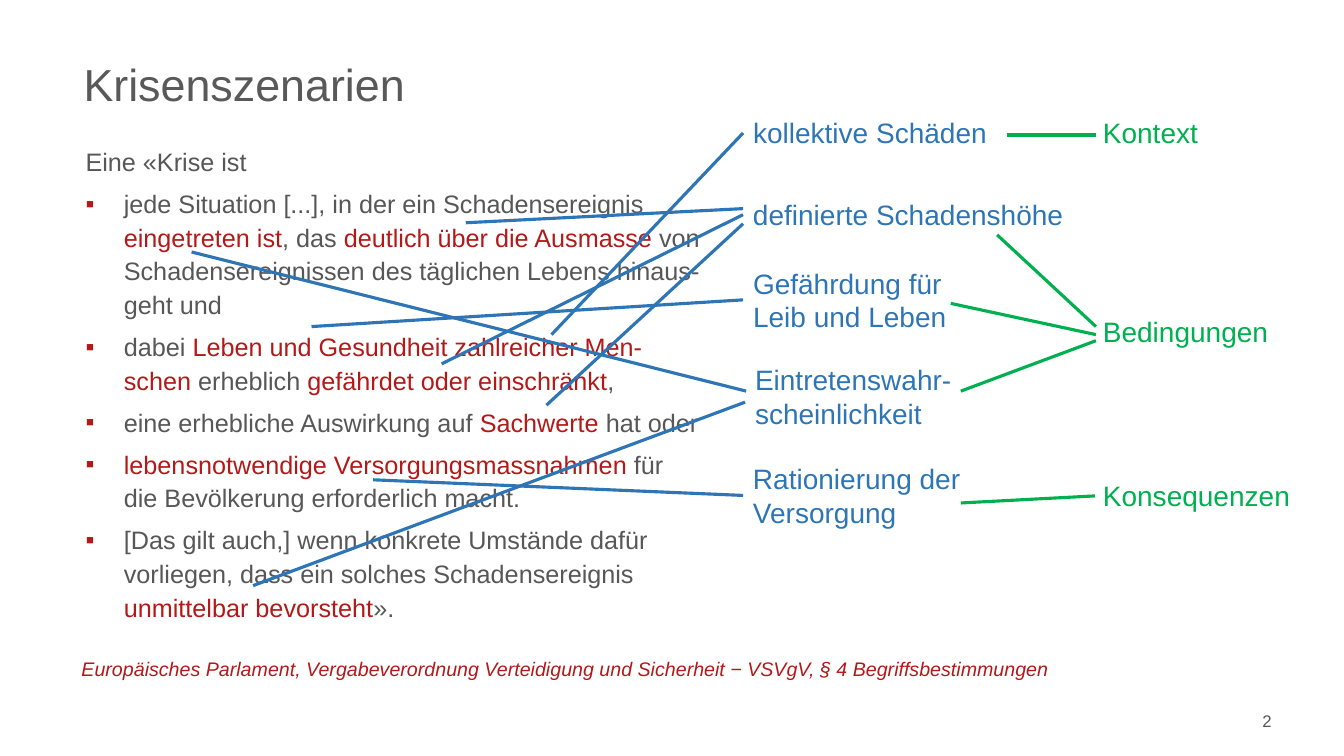
from lxml.etree import SubElement
from pptx import Presentation
from pptx.dml.color import RGBColor
from pptx.enum.shapes import MSO_CONNECTOR
from pptx.enum.text import MSO_ANCHOR, PP_ALIGN
from pptx.oxml.ns import qn
from pptx.util import Inches, Pt

GREY, TITLE_GREY, RED, BLUE, GREEN = "575757", "595959", "B41919", "2E75B6", "00B050"
LEFT_SIDE = 1
CRITERIA_LEFT, CATEGORIES_LEFT = 7.37, 10.84

DEFINITION = [
    [("Eine «Krise ist", GREY)],
    [("jede Situation [...], in der ein Schadensereignis ", GREY), ("eingetreten ist", RED),
     (", das ", GREY), ("deutlich über die Ausmasse ", RED),
     ("von Schadensereignissen des täglichen Lebens hinaus-geht und", GREY)],
    [("dabei ", GREY), ("Leben und Gesundheit zahlreicher Men-schen ", RED),
     ("erheblich ", GREY), ("gefährdet oder einschränkt", RED), (",", GREY)],
    [("eine erhebliche Auswirkung auf ", GREY), ("Sachwerte", RED), (" hat oder", GREY)],
    [("lebensnotwendige Versorgungsmassnahmen ", RED),
     ("für die Bevölkerung erforderlich macht.", GREY)],
    [("[Das gilt auch,] wenn konkrete Umstände dafür vorliegen, dass ein solches "
      "Schadensereignis ", GREY), ("unmittelbar bevorsteht", RED), ("».", GREY)],
]

CRITERIA = {
    "damage level": ("definierte Schadenshöhe", CRITERIA_LEFT, 1.91, 3.33, 0.44),
    "danger": ("Gefährdung für Leib und Leben", CRITERIA_LEFT, 2.59, 2.61, 0.77),
    "rationing": ("Rationierung der\nVersorgung", CRITERIA_LEFT, 4.53, 4.13, 0.77),
    "probability": ("Eintretenswahr-scheinlichkeit", 7.39, 3.55, 3.33, 0.77),
    "collective": ("kollektive Schäden", CRITERIA_LEFT, 1.1, 2.99, 0.44),
}

CATEGORIES = [("Kontext", 1.1, 1.8), ("Bedingungen", 3.07, 2.07), ("Konsequenzen", 4.7, 2.07)]

JOINED_LINES = [
    (5.47, 3.32, 7.37, 1.31, "collective"),
    (3.09, 3.24, 7.37, 2.98, "danger"),
    (3.7, 4.76, 7.37, 4.92, "rationing"),
    (4.38, 3.61, 7.37, 2.14, "damage level"),
]

FREE_LINES = [
    (4.62, 2.21, 7.37, 2.07),
    (5.42, 4.02, 7.37, 2.22),
    (2.51, 5.81, 7.39, 3.99),
    (1.9, 2.5, 7.4, 3.88),
]

CATEGORY_LINES = [
    (9.99, 1.34, 10.87, 1.34),
    (9.89, 2.33, 10.87, 3.24),
    (9.43, 3.01, 10.87, 3.32),
    (9.53, 3.88, 10.87, 3.38),
    (9.53, 4.99, 10.86, 4.92),
]


def color(value):
    """Turn a hex string into a colour."""
    return RGBColor.from_string(value)


def style(span, size, value, italic=False):
    """Give a run its font, size and colour."""
    span.font.name = "Arial"
    span.font.size = Pt(size)
    span.font.italic = italic
    span.font.color.rgb = color(value)


def add_text(page, text, left, top, width, height, size, value, italic=False):
    """Add a wrapping text box in one style and return it."""
    box = page.shapes.add_textbox(Inches(left), Inches(top), Inches(width), Inches(height))
    box.text_frame.word_wrap = True
    box.text_frame.text = text
    for para in box.text_frame.paragraphs:
        for span in para.runs:
            style(span, size, value, italic)
    return box


def add_bullet(para):
    """Give a paragraph a red square bullet with a hanging indent."""
    properties = para._p.get_or_add_pPr()
    properties.set("marL", str(Inches(0.38)))
    properties.set("indent", str(Inches(-0.38)))
    bullet_color = SubElement(properties, qn("a:buClr"))
    SubElement(bullet_color, qn("a:srgbClr"), val=RED)
    SubElement(properties, qn("a:buFont"), typeface="Arial")
    SubElement(properties, qn("a:buChar"), char="▪")


def add_definition(page):
    """Add the quoted definition with its highlighted words."""
    box = page.shapes.add_textbox(Inches(0.75), Inches(1.37), Inches(6.29), Inches(4.9))
    frame = box.text_frame
    frame.word_wrap = True
    for index, parts in enumerate(DEFINITION):
        para = frame.add_paragraph() if index else frame.paragraphs[0]
        para.line_spacing = Pt(24)
        para.space_after = Pt(6)
        if index:
            add_bullet(para)
        for text, value in parts:
            span = para.add_run()
            span.text = text
            style(span, 18, value)


def add_line(page, start_x, start_y, end_x, end_y, value, target=None):
    """Draw a straight line, joined to the left side of a target if given."""
    line = page.shapes.add_connector(
        MSO_CONNECTOR.STRAIGHT, Inches(start_x), Inches(start_y), Inches(end_x), Inches(end_y))
    line.line.color.rgb = color(value)
    line.line.width = Pt(2.25)
    SubElement(line._element.spPr, qn("a:effectLst"))
    if target is not None:
        line.end_connect(target, LEFT_SIDE)


def main():
    """Build the slide and save it."""
    deck = Presentation()
    deck.slide_width, deck.slide_height = Inches(13.33), Inches(7.5)
    page = deck.slides.add_slide(deck.slide_layouts[6])

    number = add_text(page, "2", 11.92, 6.95, 0.79, 0.4, 12, GREY)
    number.text_frame.vertical_anchor = MSO_ANCHOR.MIDDLE
    number.text_frame.paragraphs[0].alignment = PP_ALIGN.RIGHT
    title = add_text(page, "Krisenszenarien", 0.73, 0.6, 11.98, 0.73, 32, TITLE_GREY)
    title.text_frame.paragraphs[0].line_spacing = Pt(32)
    add_definition(page)

    criteria = {name: add_text(page, *place, 20, BLUE) for name, place in CRITERIA.items()}
    for *ends, name in JOINED_LINES:
        add_line(page, *ends, BLUE, criteria[name])
    for ends in FREE_LINES:
        add_line(page, *ends, BLUE)

    for text, top, width in CATEGORIES:
        add_text(page, text, CATEGORIES_LEFT, top, width, 0.44, 20, GREEN)
    for ends in CATEGORY_LINES:
        add_line(page, *ends, GREEN)

    add_text(page, "Europäisches Parlament, Vergabeverordnung Verteidigung und Sicherheit − VSVgV, "
             "§ 4 Begriffsbestimmungen", 0.71, 6.47, 11.84, 0.34, 14, RED, italic=True)
    deck.save("out.pptx")


if __name__ == "__main__":
    main()
